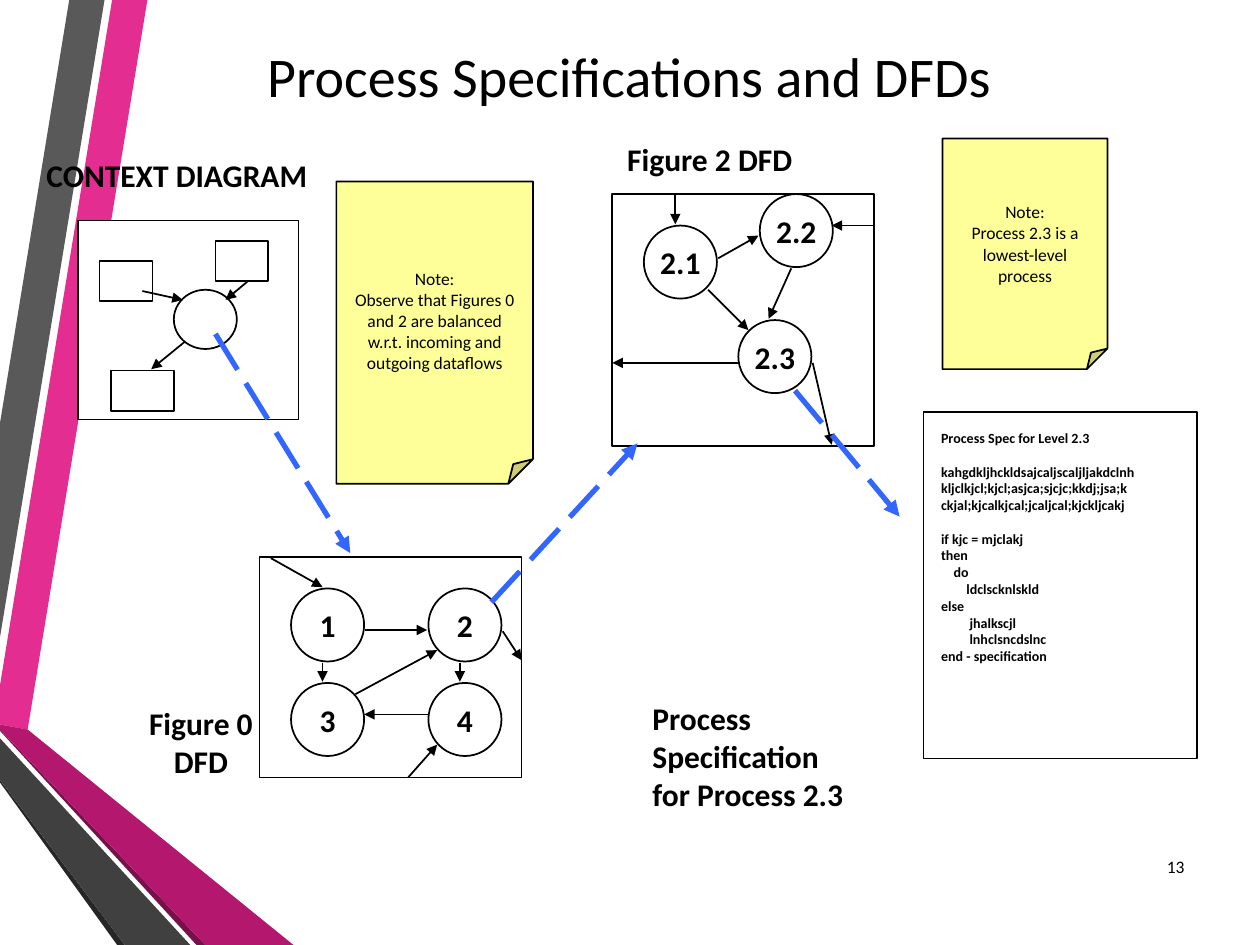
from lxml import etree
from pptx import Presentation
from pptx import util as u
from pptx.dml.color import RGBColor
from pptx.enum import dml, shapes, text
from pptx.oxml.ns import qn

PX = 9144  # 100 px to the inch
BLACK, WHITE, BLUE, NOTE = "000000", "FFFFFF", "3366FF", "FFFF99"
SHAPE, ALIGN, ANCHOR = shapes.MSO_SHAPE, text.PP_ALIGN, text.MSO_ANCHOR


def px(*nums):
    return [u.Emu(n * PX) for n in nums]


def color(hue):
    return RGBColor.from_string(hue)


def write(shape, lines, size=18, bold=False, align=ALIGN.LEFT,
          anchor=ANCHOR.TOP, wrap=True, grow=False, spacing=None, gaps=()):
    """Fill a shape with one paragraph per line; gaps are lines set off above."""
    frame = shape.text_frame
    frame.word_wrap = wrap
    frame.vertical_anchor = anchor
    frame.auto_size = (text.MSO_AUTO_SIZE.SHAPE_TO_FIT_TEXT if grow
                       else text.MSO_AUTO_SIZE.NONE)
    frame.text = lines
    for i, para in enumerate(frame.paragraphs):
        para.alignment = align
        if spacing:
            para.line_spacing = spacing
        if i in gaps:
            para.space_before = u.Pt(size * 1.2)
        font = para.font
        font.name, font.size, font.bold = "Calibri", u.Pt(size), bold
        font.color.rgb = color(BLACK)


def label(slide, box, lines, **style):
    write(slide.shapes.add_textbox(*px(*box)), lines, **style)


def shape(slide, kind, box, fill=WHITE):
    item = slide.shapes.add_shape(kind, *px(*box))
    item.shadow.inherit = False
    item.fill.solid()
    item.fill.fore_color.rgb = color(fill)
    item.line.color.rgb = color(BLACK)
    item.line.width = u.Pt(1)
    return item


def arrow(slide, ends, hue=BLACK, width=1, dash=None):
    item = slide.shapes.add_connector(shapes.MSO_CONNECTOR.STRAIGHT, *px(*ends))
    item.line.color.rgb = color(hue)
    item.line.width = u.Pt(width)
    if dash:
        item.line.dash_style = dash
    etree.SubElement(item.line._get_or_add_ln(), qn("a:tailEnd"), type="triangle")
    etree.SubElement(item._element.spPr, qn("a:effectLst"))


def ribbons(slide):
    bands = [
        ("E32D91", [(0, 544), (0, 575), (22, 579), (117, 0), (89, 0)]),
        ("595959", [(83, 0), (55, 0), (0, 336), (0, 506)]),
        ("262626", [(0, 619), (0, 621), (93, 750), (99, 750)]),
        ("781049", [(0, 579), (0, 580), (156, 750), (163, 750)]),
        ("B4186E", [(0, 579), (163, 750), (233, 750), (22, 579), (0, 575)]),
        ("404040", [(0, 619), (99, 750), (151, 750), (0, 586)]),
    ]
    for hue, points in bands:
        pen = slide.shapes.build_freeform(*points[0], scale=PX)
        pen.add_line_segments(points[1:], close=True)
        band = pen.convert_to_shape()
        band.shadow.inherit = False
        band.fill.solid()
        band.fill.fore_color.rgb = color(hue)
        band.line.fill.background()


def heading(slide, box, words):
    title = slide.shapes.title
    title.left, title.top, title.width, title.height = px(*box)
    write(title, words, size=32, align=ALIGN.CENTER, anchor=ANCHOR.MIDDLE,
          spacing=0.9)


def flows(slide, left, top, ends):
    for x1, y1, x2, y2 in ends:
        arrow(slide, (left + x1, top + y1, left + x2, top + y2))


def context(slide, box):
    left, top = box[:2]
    shape(slide, SHAPE.RECTANGLE, box)
    shape(slide, SHAPE.OVAL, (left + 76, top + 55, 50, 47))
    for x, y, wide in [(17, 32, 42), (109, 16, 42), (26, 119, 50)]:
        shape(slide, SHAPE.RECTANGLE, (left + x, top + y, wide, 32))
    flows(slide, left, top, [(51, 56, 83, 63), (85, 96, 58, 118),
                             (135, 48, 117, 63)])


def figure(slide, box, nodes, ends):
    """Draw a framed DFD of numbered processes and the flows between them."""
    left, top = box[:2]
    shape(slide, SHAPE.RECTANGLE, box)
    for name, x, y in nodes:
        node = shape(slide, SHAPE.OVAL, (left + x, top + y, 58, 58))
        write(node, name, bold=True, align=ALIGN.CENTER,
              anchor=ANCHOR.MIDDLE, wrap=False)
    flows(slide, left, top, ends)


def note(slide, box, words):
    card = shape(slide, SHAPE.FOLDED_CORNER, box, NOTE)
    guides = card._element.spPr.find(qn("a:prstGeom")).get_or_add_avLst()
    etree.SubElement(guides, qn("a:gd"), name="adj", fmla="val 12500")
    write(card, words, size=10, align=ALIGN.CENTER, anchor=ANCHOR.MIDDLE)


def spec(slide, box):
    left, top = box[:2]
    shape(slide, SHAPE.RECTANGLE, box)
    lines = [
        "Process Spec for Level 2.3",
        "kahgdkljhckldsajcaljscaljljakdclnh",
        "kljclkjcl;kjcl;asjca;sjcjc;kkdj;jsa;k",
        "ckjal;kjcalkjcal;jcaljcal;kjckljcakj",
        "if kjc = mjclakj",
        "then",
        "    do",
        "        ldclscknlskld",
        "else",
        "         jhalkscjl",
        "         lnhclsncdslnc",
        "end - specification",
    ]
    label(slide, (left + 4, top + 9, 202, 197), "\n".join(lines), size=8,
          bold=True, grow=True, gaps=(1, 4))


def main():
    deck = Presentation()
    deck.slide_width, deck.slide_height = px(1000, 750)
    slide = deck.slides.add_slide(deck.slide_layouts[5])
    ribbons(slide)
    heading(slide, (108, 42, 783, 42), "Process Specifications and DFDs")
    label(slide, (903, 668, 47, 40), "13", size=10, align=ALIGN.RIGHT,
          anchor=ANCHOR.MIDDLE)

    context(slide, (62, 175, 175, 158))
    figure(slide, (206, 442, 208, 175),
           [("1", 25, 25), ("2", 134, 25), ("3", 25, 100), ("4", 134, 100)],
           [(9, 1, 50, 24), (84, 58, 133, 58), (193, 59, 208, 82),
            (159, 84, 159, 99), (76, 109, 141, 74), (134, 125, 83, 125),
            (50, 84, 50, 99), (118, 175, 141, 149)])
    figure(slide, (486, 154, 208, 200),
           [("2.1", 25, 25), ("2.2", 117, 0), ("2.3", 100, 100)],
           [(50, 1, 50, 24), (84, 51, 116, 33), (76, 76, 108, 108),
            (142, 59, 124, 99), (208, 25, 174, 25), (159, 134, 174, 199),
            (101, 134, 0, 134)])
    spec(slide, (733, 327, 217, 275))
    note(slide, (748, 110, 131, 183),
         "Note:\nProcess 2.3 is a lowest-level process")
    note(slide, (267, 144, 156, 240),
         "Note:\nObserve that Figures 0 and 2 are balanced "
         "w.r.t. incoming and outgoing dataflows")

    captions = [
        ((27, 119, 247, 40), "CONTEXT DIAGRAM", ALIGN.LEFT),
        ((106, 554, 107, 70), "Figure 0\nDFD", ALIGN.CENTER),
        ((488, 106, 160, 40), "Figure 2 DFD", ALIGN.LEFT),
        ((508, 550, 177, 101), "Process\nSpecification\nfor Process 2.3",
         ALIGN.LEFT),
    ]
    for box, words, align in captions:
        label(slide, box, words, bold=True, align=align, wrap=False, grow=True)

    for ends in [(171, 265, 278, 439), (631, 310, 714, 410),
                 (390, 478, 506, 352)]:
        arrow(slide, ends, BLUE, 3, dml.MSO_LINE.LONG_DASH)
    deck.save("out.pptx")


if __name__ == "__main__":
    main()
